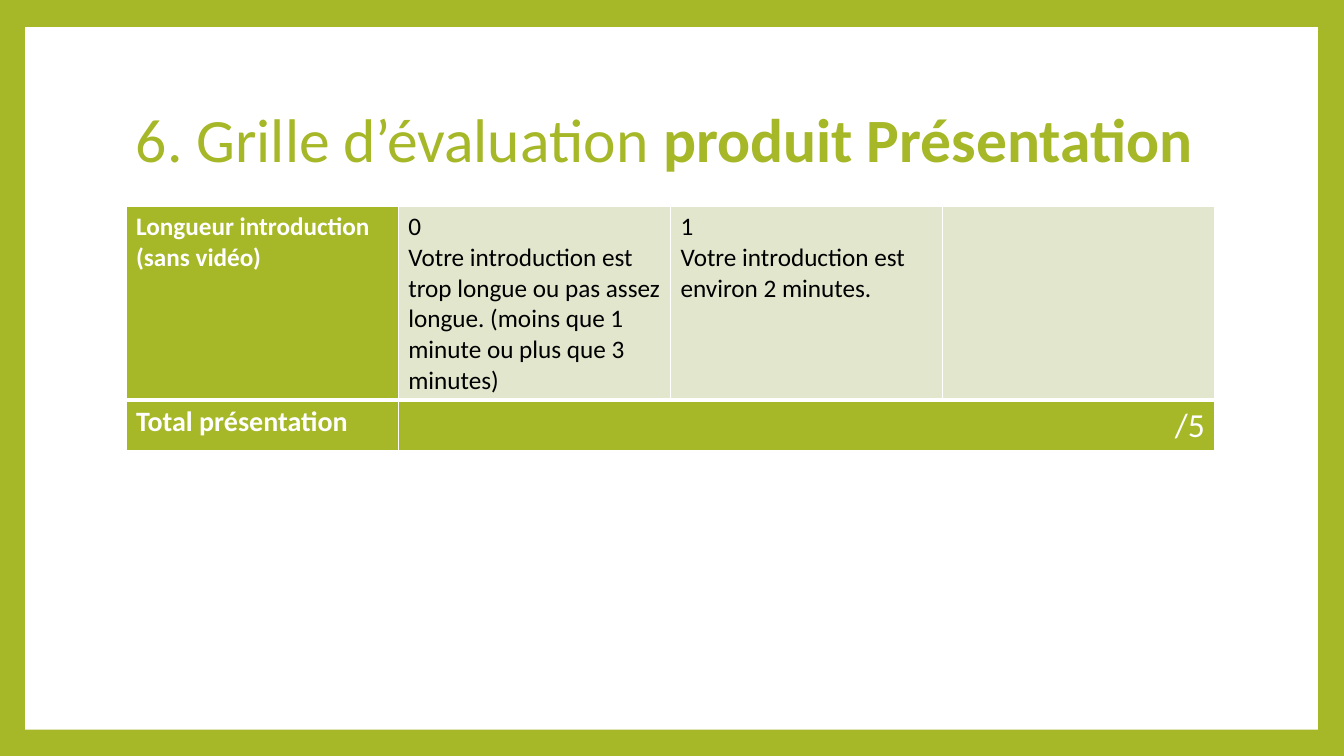
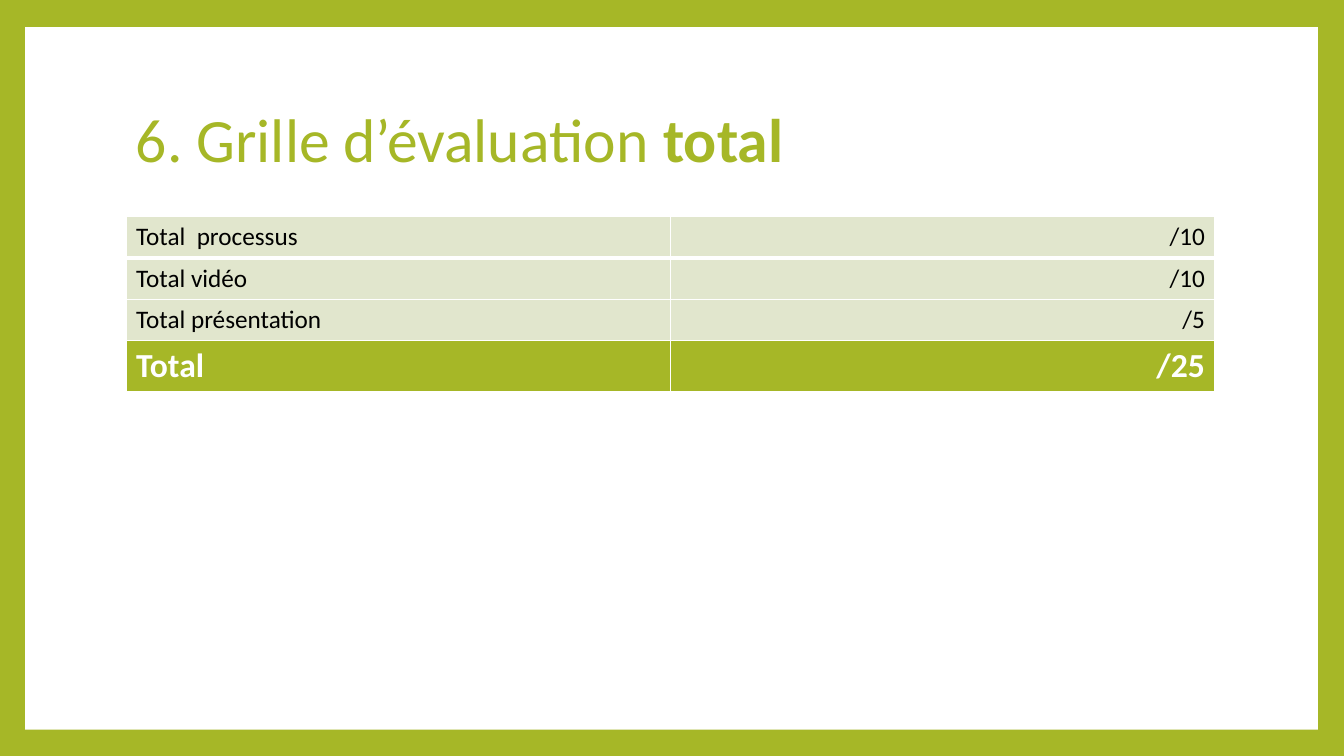
from lxml import etree
from pptx import Presentation
from pptx.dml.color import RGBColor as RGB
from pptx.enum.shapes import MSO_SHAPE as SHAPE
from pptx.enum.text import MSO_ANCHOR as ANCHOR, PP_ALIGN as ALIGN
from pptx.oxml.ns import qn
from pptx.util import Inches, Pt

COLORS = {"green": "A6B727", "pale": "E1E6CD", "white": "FFFFFF", "black": "000000"}
FONT = "Calibri"
LEFT, WIDTH = 1.25, 10.8


def add_text(p, text, size=18, color="black", bold=False, align=ALIGN.LEFT):
    p.alignment = align
    r = p.add_run()
    r.text = text
    r.font.name = FONT
    r.font.size = Pt(size)
    r.font.bold = bold
    r.font.color.rgb = RGB.from_string(COLORS[color])


def set_borders(cell, top=1, bottom=1):
    tc_pr = cell._tc.get_or_add_tcPr()
    for side, width in (("L", 1), ("R", 1), ("T", top), ("B", bottom)):
        ln = etree.SubElement(tc_pr, qn(f"a:ln{side}"), w=str(Pt(width)))
        fill = etree.SubElement(ln, qn("a:solidFill"))
        etree.SubElement(fill, qn("a:srgbClr"), val=COLORS["white"])


# Cell styles: fill, then text format
BODY = ("pale", {})
SCORE = ("pale", {"align": ALIGN.RIGHT})
HEAD = ("green", {"color": "white", "bold": True})
SUBTOTAL = ("green", {"color": "white", "bold": True, "size": 20})
SUBTOTAL_SCORE = ("green", {"color": "white", "size": 24, "align": ALIGN.RIGHT})
TOTAL = ("green", {"color": "white", "bold": True, "size": 24})
TOTAL_SCORE = ("green", {**TOTAL[1], "align": ALIGN.RIGHT})

# Slide content: bold end of the title, table top, row heights, cells
SLIDES = [
    ("produit Présentation", 2.05, [1.92, 0.49], [
        [("Longueur introduction (sans vidéo)", HEAD),
         ("0\nVotre introduction est trop longue ou pas assez longue. "
          "(moins que 1 minute ou plus que 3 minutes)", BODY),
         ("1\nVotre introduction est environ 2 minutes.", BODY),
         ("", BODY)],
        [("Total présentation", SUBTOTAL), ("/5", SUBTOTAL_SCORE),
         ("", SUBTOTAL_SCORE), ("", SUBTOTAL_SCORE)],
    ]),
    ("total", 2.15, [0.41, 0.41, 0.41, 0.5], [
        [("Total  processus", BODY), ("/10", SCORE)],
        [("Total vidéo", BODY), ("/10", SCORE)],
        [("Total présentation", BODY), ("/5", SCORE)],
        [("Total", TOTAL), ("/25", TOTAL_SCORE)],
    ]),
]

prs = Presentation()
prs.slide_width, prs.slide_height = Inches(13.33), Inches(7.5)

# Green frame colour shared by all slides
bg = prs.slide_master.background.fill
bg.solid()
bg.fore_color.rgb = RGB.from_string(COLORS["green"])

for topic, top, heights, rows in SLIDES:
    s = prs.slides.add_slide(prs.slide_layouts[6])

    # White panel
    panel = s.shapes.add_shape(SHAPE.RECTANGLE, Inches(0.25), Inches(0.27),
                               Inches(12.82), Inches(6.97))
    panel.shadow.inherit = False
    panel.fill.solid()
    panel.fill.fore_color.rgb = RGB.from_string(COLORS["white"])
    panel.line.fill.background()

    # Title
    title = s.shapes.add_textbox(Inches(LEFT), Inches(0.67), Inches(WIDTH), Inches(1.48))
    tf = title.text_frame
    tf.word_wrap = True
    tf.vertical_anchor = ANCHOR.MIDDLE
    p = tf.paragraphs[0]
    p.line_spacing = 0.9
    add_text(p, "6. Grille d’évaluation ", size=44, color="green")
    add_text(p, topic, size=44, color="green", bold=True)

    # Grading table
    n_cols = len(rows[0])
    table = s.shapes.add_table(len(rows), n_cols, Inches(LEFT), Inches(top),
                               Inches(WIDTH), Inches(sum(heights))).table
    table.first_row = table.horz_banding = False
    for col in table.columns:
        col.width = Inches(WIDTH / n_cols)
    for i, (height, row) in enumerate(zip(heights, rows)):
        table.rows[i].height = Inches(height)
        for j, (text, (fill, fmt)) in enumerate(row):
            cell = table.cell(i, j)
            set_borders(cell, top=3 if i == 1 else 1, bottom=3 if i == 0 else 1)
            cell.fill.solid()
            cell.fill.fore_color.rgb = RGB.from_string(COLORS[fill])
            tf = cell.text_frame
            for k, line in enumerate(text.split("\n") if text else []):
                p = tf.add_paragraph() if k else tf.paragraphs[0]
                add_text(p, line, **fmt)

    # The score on a wide table spans the remaining columns
    if n_cols > 2:
        table.cell(len(rows) - 1, 1).merge(table.cell(len(rows) - 1, n_cols - 1))

prs.save("out.pptx")
